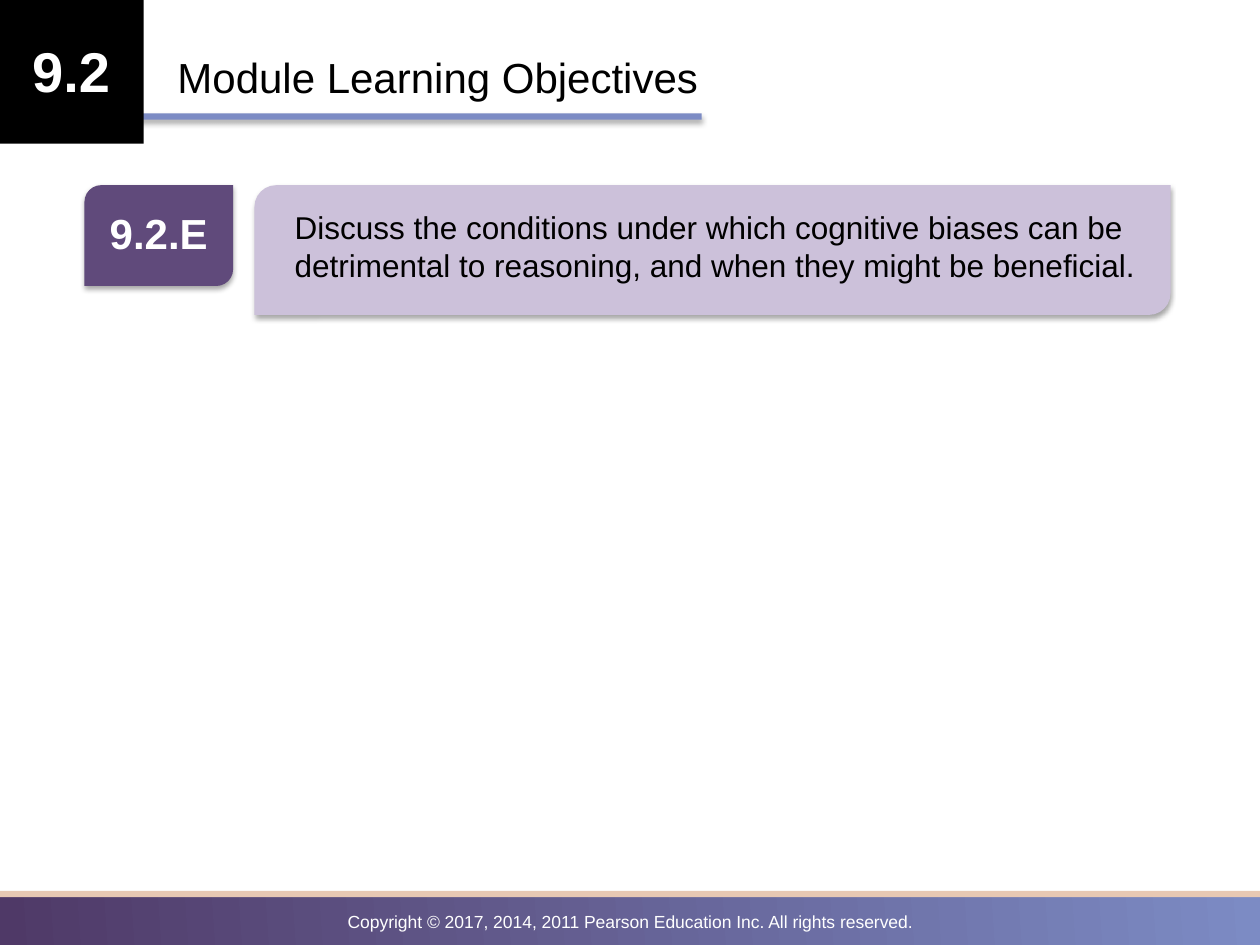
"""Build the learning objectives slide for module 9.2."""
from lxml.etree import SubElement
from pptx import Presentation
from pptx.dml.color import RGBColor
from pptx.enum.shapes import MSO_SHAPE as Shape
from pptx.enum.text import PP_ALIGN as Align
from pptx.oxml.ns import qn
from pptx.util import Inches, Pt

COLORS = {
    "black": "000000", "white": "FFFFFF", "plum": "4F3967", "blue": "7C8BC4",
    "peach": "E7C8B3", "violet": "604A7B", "lilac": "CCC1DA",
}

deck = Presentation()
deck.slide_width, deck.slide_height = Inches(10), Inches(7.5)
COLUMN, ROW = deck.slide_width / 100, deck.slide_height / 75
slide = deck.slides.add_slide(deck.slide_layouts[6])


def add_panel(column, row, columns, rows, color, kind=Shape.RECTANGLE, raised=False):
    panel = slide.shapes.add_shape(
        kind, int(column * COLUMN), int(row * ROW), int(columns * COLUMN), int(rows * ROW))
    panel.shadow.inherit = False
    panel.fill.solid()
    panel.fill.fore_color.rgb = RGBColor.from_string(COLORS[color])
    panel.line.fill.background()
    if raised:
        effects = panel._element.spPr.find(qn("a:effectLst"))
        shadow = SubElement(effects, qn("a:outerShdw"), blurRad=str(Pt(3.1)),
                            dist=str(Pt(1.8)), dir="5400000", rotWithShape="0")
        tint = SubElement(shadow, qn("a:srgbClr"), val=COLORS["black"])
        SubElement(tint, qn("a:alpha"), val="35000")
    return panel


def add_label(column, row, columns, rows, wording, size, color, align=Align.LEFT, bold=False):
    frame = slide.shapes.add_textbox(
        int(column * COLUMN), int(row * ROW), int(columns * COLUMN), int(rows * ROW)).text_frame
    frame.word_wrap = True
    paragraph = frame.paragraphs[0]
    paragraph.alignment = align
    run = paragraph.add_run()
    run.text = wording
    run.font.name, run.font.size, run.font.bold = "Arial", Pt(size), bold
    run.font.color.rgb = RGBColor.from_string(COLORS[color])


footer = add_panel(0, 70.8, 100, 4.2, "plum")
footer.fill.gradient()
footer.fill.gradient_angle = 4
for stop, shade in zip(footer.fill.gradient_stops, ("plum", "blue")):
    stop.color.rgb = RGBColor.from_string(COLORS[shade])
add_panel(0, 70.7, 100, 0.5, "peach")
add_label(0, 71.8, 100, 2.7,
          "Copyright © 2017, 2014, 2011 Pearson Education Inc. All rights reserved.",
          10, "white", Align.CENTER)

add_panel(0, 9, 55.7, 0.5, "blue", raised=True)
add_panel(0, 0, 11.4, 11.4, "black")
add_label(-0.1, 2.4, 11.5, 6.4, "9.2", 32, "white", Align.CENTER, True)
add_label(13.1, 3.6, 77.1, 5, "Module Learning Objectives", 24, "black")

add_panel(6.7, 14.7, 11.8, 8, "violet", Shape.ROUND_2_DIAG_RECTANGLE, True)
add_label(6.7, 16, 11.8, 5, "9.2.E", 24, "white", Align.CENTER, True)
add_panel(20.2, 14.7, 72.7, 10.3, "lilac", Shape.ROUND_2_DIAG_RECTANGLE, True)
add_label(22.4, 16, 69.9, 7.1,
          "Discuss the conditions under which cognitive biases can be detrimental "
          "to reasoning, and when they might be beneficial.", 18, "black")

deck.save("out.pptx")
